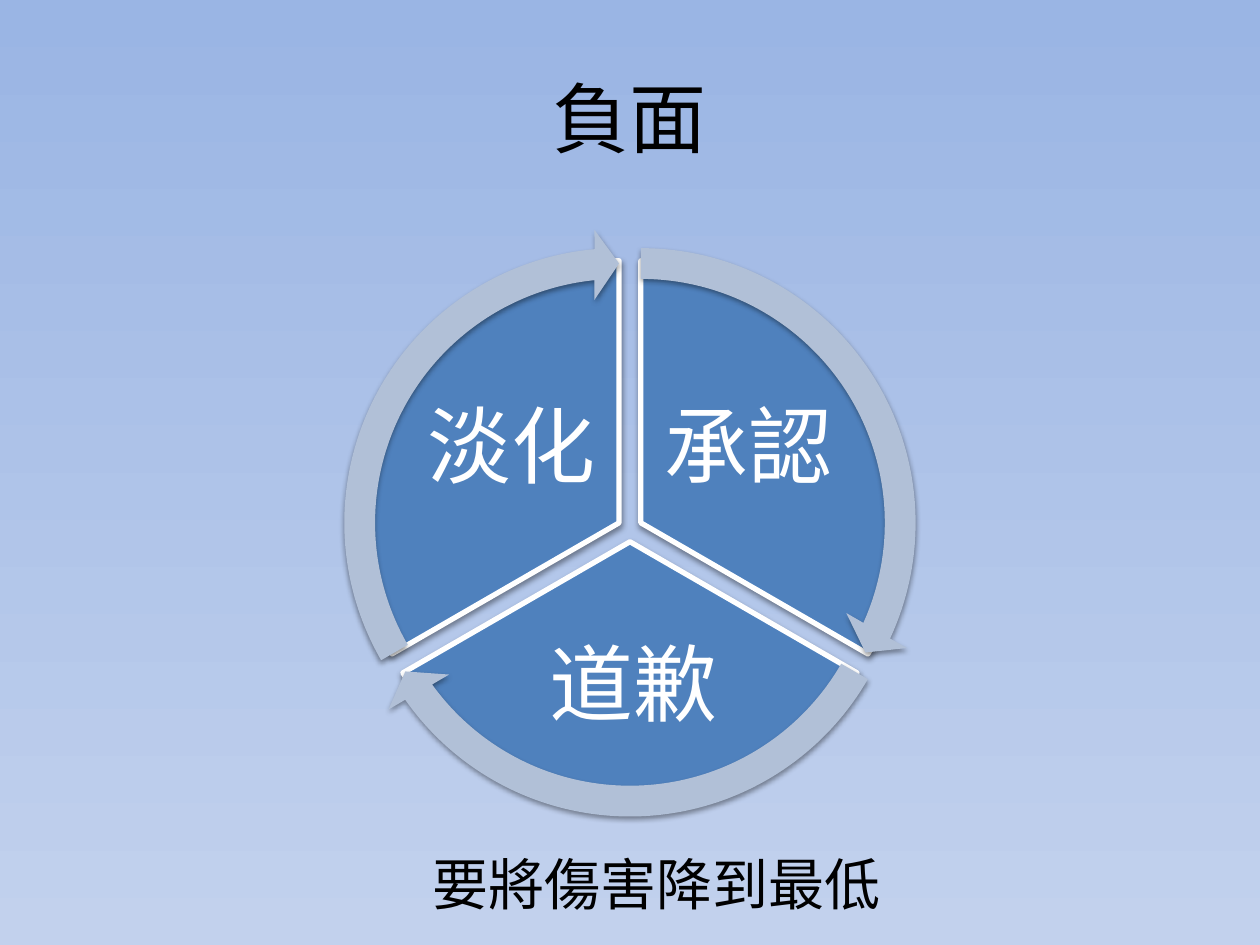
from math import cos, radians, sin, tan

from lxml import etree
from pptx import Presentation, util as u
from pptx.dml.color import RGBColor
from pptx.enum import shapes, text
from pptx.oxml import ns

Pt = u.Pt


def add_text(parent, box, words, size, font, color, align, anchor, inset):
    sp = parent.add_textbox(*[Pt(v) for v in box])
    tf = sp.text_frame
    tf.word_wrap = True
    tf.vertical_anchor = anchor
    tf.margin_left = tf.margin_right = Pt(inset[0])
    tf.margin_top = tf.margin_bottom = Pt(inset[1])
    tf.text = words
    p = tf.paragraphs[0]
    p.alignment = align
    r = p.runs[0]
    r.font.size, r.font.name = Pt(size), font
    r.font.color.rgb = RGBColor.from_string(color)
    return p


def paint(sp, color):
    """Fill a shape and give it a soft shadow straight below."""
    sp.fill.solid()
    sp.fill.fore_color.rgb = RGBColor.from_string(color)
    sp.shadow.inherit = False
    effects = sp._element.spPr.find(ns.qn("a:effectLst"))
    shadow = etree.SubElement(effects, ns.qn("a:outerShdw"), blurRad=str(Pt(3.1)),
                              dist=str(Pt(1.6)), dir="5400000", rotWithShape="0")
    clr = etree.SubElement(shadow, ns.qn("a:srgbClr"), val="000000")
    etree.SubElement(clr, ns.qn("a:alpha"), val="38000")


prs = Presentation()
prs.slide_width, prs.slide_height = Pt(720), Pt(540)
s = prs.slides.add_slide(prs.slide_layouts[6])

fill = s.background.fill
fill.gradient()
fill.gradient_angle = 270
for stop, position, color in zip(fill.gradient_stops, (0, 1), ("9AB5E4", "C2D1ED")):
    stop.position = position
    stop.color.rgb = RGBColor.from_string(color)

CENTER, MIDDLE, TOP = text.PP_ALIGN.CENTER, text.MSO_ANCHOR.MIDDLE, text.MSO_ANCHOR.TOP
add_text(s.shapes, (36, 21.6, 648, 90), "負面", 44, "Arial", "000000",
         CENTER, MIDDLE, (7.2, 3.6))

# Three 120 degree sectors, each pushed out from the middle of the cycle
CX, CY, GAP, RADIUS = 360, 302.4, 7.2, 149.8
OUTER, INNER, TIP, HEAD_OUT, HEAD_IN = 157, 139.4, 148.2, 168, 128.2
sectors = [
    ("承認", -90, (374.4, 212.4, 106.6, 89.3)),
    ("道歉", 30, (281.5, 354.2, 160.6, 78.5)),
    ("淡化", 150, (239, 212.4, 106.6, 89.3)),
]
cycle = s.shapes.add_group_shape().shapes
centers = []
for words, start, box in sectors:
    middle = radians(start + 60)
    x, y = CX + GAP * cos(middle), CY + GAP * sin(middle)
    centers.append((x, y))
    sp = cycle.add_shape(shapes.MSO_SHAPE.PIE, Pt(x - RADIUS), Pt(y - RADIUS),
                         Pt(2 * RADIUS), Pt(2 * RADIUS))
    sp.adjustments[0] = start % 360 * 0.6
    sp.adjustments[1] = (start + 120) % 360 * 0.6
    paint(sp, "4F81BD")
    sp.line.color.rgb = RGBColor.from_string("FFFFFF")
    sp.line.width = Pt(3)
    p = add_text(cycle, box, words, 48, "Calibri", "FFFFFF", CENTER, MIDDLE, (5, 5))
    p.line_spacing = 0.9

# Curved arrow around each sector: (command, points as radius and degrees from
# its start); an "arc" holds radius, first and last degree, drawn as two curves
steps = [
    ("moveTo", (OUTER, 0)), ("arc", (OUTER, 0, 114.9)),
    ("lnTo", (HEAD_OUT, 115.2)), ("lnTo", (TIP, 120)), ("lnTo", (HEAD_IN, 113.7)),
    ("lnTo", (INNER, 114.2)), ("arc", (INNER, 114.2, 0)),
]
for (x, y), (_, start, _) in zip(centers, sectors):
    left, top, side = x - HEAD_OUT, y - HEAD_OUT, 2 * HEAD_OUT
    builder = cycle.build_freeform(Pt(left), Pt(top))
    builder.add_line_segments([(Pt(left + side), Pt(top)),
                               (Pt(left + side), Pt(top + side)),
                               (Pt(left), Pt(top + side))])
    sp = builder.convert_to_shape()
    outline = sp._element.spPr.find(".//" + ns.qn("a:path"))
    for child in list(outline):
        outline.remove(child)
    for command, (d, a, *last) in steps:
        curves = [(command, [(d, a)])]
        if last:
            half = (last[0] - a) / 2
            k = 4 / 3 * tan(radians(half) / 4)
            reach, swing = d * (1 + k * k) ** 0.5, half / 2
            swing = 180 / 3.14159265 * (k - k ** 3 / 3 + k ** 5 / 5)
            curves = [("cubicBezTo", [(reach, b + swing), (reach, b + half - swing),
                                      (d, b + half)]) for b in (a, a + half)]
        for tag, points in curves:
            segment = etree.SubElement(outline, ns.qn("a:" + tag))
            for r, b in points:
                angle = radians(start + b)
                etree.SubElement(segment, ns.qn("a:pt"),
                                 x=str(Pt(HEAD_OUT + r * cos(angle))),
                                 y=str(Pt(HEAD_OUT + r * sin(angle))))
    etree.SubElement(outline, ns.qn("a:close"))
    paint(sp, "B1C0D7")
    sp.line.fill.background()

add_text(s.shapes, (239.8, 481.7, 272.9, 46.1), "要將傷害降到最低", 32, "Calibri",
         "000000", text.PP_ALIGN.LEFT, TOP, (7.2, 3.6))

prs.save("out.pptx")
